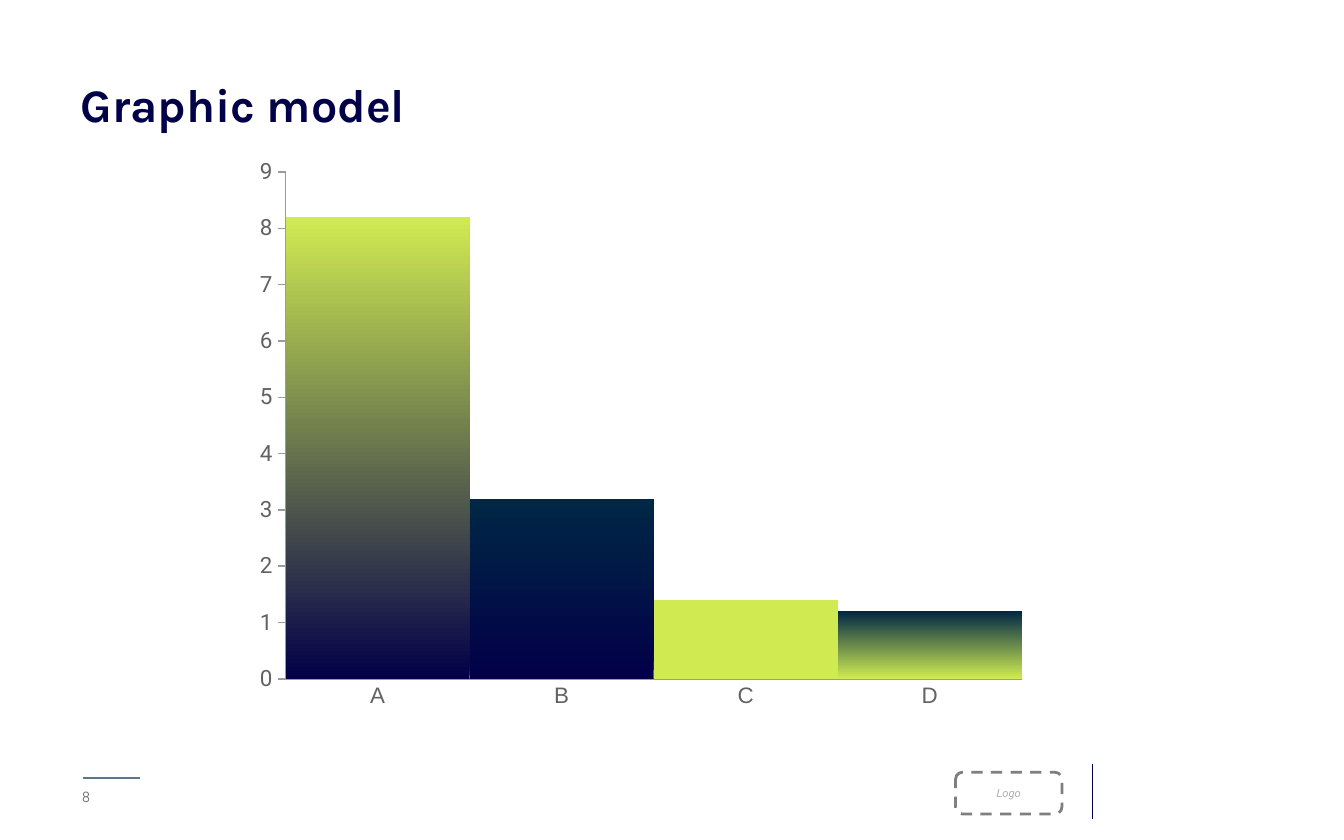
import pptx
import pptx.chart.data
import pptx.dml.color
import pptx.enum.chart
import pptx.enum.dml
import pptx.enum.shapes
import pptx.enum.text
import pptx.oxml
import pptx.oxml.ns
import pptx.util
from lxml import etree

Cm, Pt = pptx.util.Cm, pptx.util.Pt

TITLE = "Graphic model"
PAGE = "8"
LOGO = "Logo"
THEME = {
    "navy": "020048", "petrol": "002745", "lime": "D0EB52", "text": "626262",
    "axis": "9B9B9B", "rule": "607687", "dash": "7F7F7F", "logo": "B0B0B0",
    "title_pt": 25, "axis_pt": 12, "page_pt": 8, "logo_pt": 6,
}
# category, value, colours from bottom to top
BARS = [
    ("A", 8.2, ("navy", "lime")),
    ("B", 3.2, ("navy", "petrol")),
    ("C", 1.4, ("lime",)),
    ("D", 1.2, ("lime", "petrol")),
]
PLOT_AREA = {"x": 0.05, "y": 0.04, "w": 0.93, "h": 0.89}
# start x, start y, end x, end y in cm, colour
RULES = [
    (1.57, 14.71, 2.64, 14.71, "rule"),
    (20.65, 14.45, 20.65, 15.49, "navy"),
]


def box(left, top, width, height):
    return Cm(left), Cm(top), Cm(width), Cm(height)


def rgb(name):
    return pptx.dml.color.RGBColor.from_string(THEME[name])


def style(font, face, size, color, bold=False, italic=False):
    font.name, font.size = face, Pt(THEME[size])
    font.bold, font.italic = bold, italic
    font.color.rgb = rgb(color)


def paint(fill, colors):
    """Fill with one colour, or with a gradient rising from the bottom."""
    if len(colors) == 1:
        fill.solid()
        fill.fore_color.rgb = rgb(colors[0])
        return
    fill.gradient()
    fill.gradient_angle = 90
    for stop, color in zip(fill.gradient_stops, colors):
        stop.color.rgb = rgb(color)


def fix_plot_area(chart):
    """Pin the inner plot area to fractions of the chart."""
    plot_area = chart.element.chart.plotArea
    for old in plot_area.findall(pptx.oxml.ns.qn("c:layout")):
        plot_area.remove(old)
    layout = etree.Element(pptx.oxml.ns.qn("c:layout"))
    manual = etree.SubElement(layout, pptx.oxml.ns.qn("c:manualLayout"))
    settings = [("layoutTarget", "inner"), ("xMode", "edge"), ("yMode", "edge")]
    for tag, value in settings + list(PLOT_AREA.items()):
        etree.SubElement(manual, pptx.oxml.ns.qn("c:" + tag), val=str(value))
    plot_area.insert(0, layout)


def add_bar_chart(s):
    data = pptx.chart.data.CategoryChartData()
    data.categories = [name for name, _, _ in BARS]
    data.add_series("Series 1", [value for _, value, _ in BARS])
    chart = s.shapes.add_chart(
        pptx.enum.chart.XL_CHART_TYPE.COLUMN_CLUSTERED,
        *box(4.65, 2.82, 14.96, 10.77), data).chart
    chart.has_legend = chart.has_title = False
    style(chart.font, "Arial", "axis_pt", "text")
    plot = chart.plots[0]
    plot.gap_width, plot.overlap, plot.vary_by_categories = 0, 1, False
    for i, (_, _, colors) in enumerate(BARS):
        paint(plot.series[0].points[i].format.fill, colors)

    marks = pptx.enum.chart.XL_TICK_MARK
    for axis, face, mark in ((chart.category_axis, "Arial", marks.NONE),
                             (chart.value_axis, "Roboto", marks.OUTSIDE)):
        style(axis.tick_labels.font, face, "axis_pt", "text")
        axis.major_tick_mark, axis.minor_tick_mark = mark, marks.NONE
        axis.has_major_gridlines = False
        axis.format.line.color.rgb = rgb("axis")
        axis.format.line.width = Pt(0.75)
    values = chart.value_axis
    values.minimum_scale, values.maximum_scale, values.major_unit = 0, 9, 1
    fix_plot_area(chart)


def add_rule(s, x1, y1, x2, y2, color):
    line = s.shapes.add_connector(
        pptx.enum.shapes.MSO_CONNECTOR.STRAIGHT, Cm(x1), Cm(y1), Cm(x2), Cm(y2))
    line.line.color.rgb = rgb(color)
    line.line.width = Pt(0.75)
    etree.SubElement(line.element.spPr, pptx.oxml.ns.qn("a:effectLst"))


def add_footer(s):
    for rule in RULES:
        add_rule(s, *rule)
    tf = s.shapes.add_textbox(*box(1.3, 14.76, 1.07, 0.61)).text_frame
    tf.word_wrap = True
    tf.text = PAGE
    style(tf.paragraphs[0].runs[0].font, "Quicksand", "page_pt", "text")

    sp = s.shapes.add_shape(pptx.enum.shapes.MSO_SHAPE.ROUNDED_RECTANGLE,
                            *box(18.06, 14.6, 2.01, 0.79))
    sp.shadow.inherit = False
    sp.fill.background()
    sp.line.color.rgb = rgb("dash")
    sp.line.width = Pt(1.5)
    sp.line.dash_style = pptx.enum.dml.MSO_LINE.DASH
    tf = sp.text_frame
    tf.margin_top = tf.margin_bottom = 0
    tf.text = LOGO
    tf.vertical_anchor = pptx.enum.text.MSO_ANCHOR.MIDDLE
    p = tf.paragraphs[0]
    p.alignment = pptx.enum.text.PP_ALIGN.CENTER
    style(p.runs[0].font, "Roboto", "logo_pt", "logo", italic=True)


def add_title(s):
    title = s.shapes.title
    title.left, title.top, title.width, title.height = box(1.27, 0.64, 15.24, 2.64)
    tf = title.text_frame
    tf.text = TITLE
    tf.auto_size = pptx.enum.text.MSO_AUTO_SIZE.NONE
    tf.vertical_anchor = pptx.enum.text.MSO_ANCHOR.MIDDLE
    p = tf.paragraphs[0]
    p.alignment = pptx.enum.text.PP_ALIGN.LEFT
    style(p.runs[0].font, "Karla", "title_pt", "navy", bold=True)


def main():
    prs = pptx.Presentation()
    prs.slide_width, prs.slide_height = Cm(25.4), Cm(15.88)
    s = prs.slides.add_slide(prs.slide_layouts[5])
    add_footer(s)
    add_bar_chart(s)
    add_title(s)
    prs.save("out.pptx")


if __name__ == "__main__":
    main()
